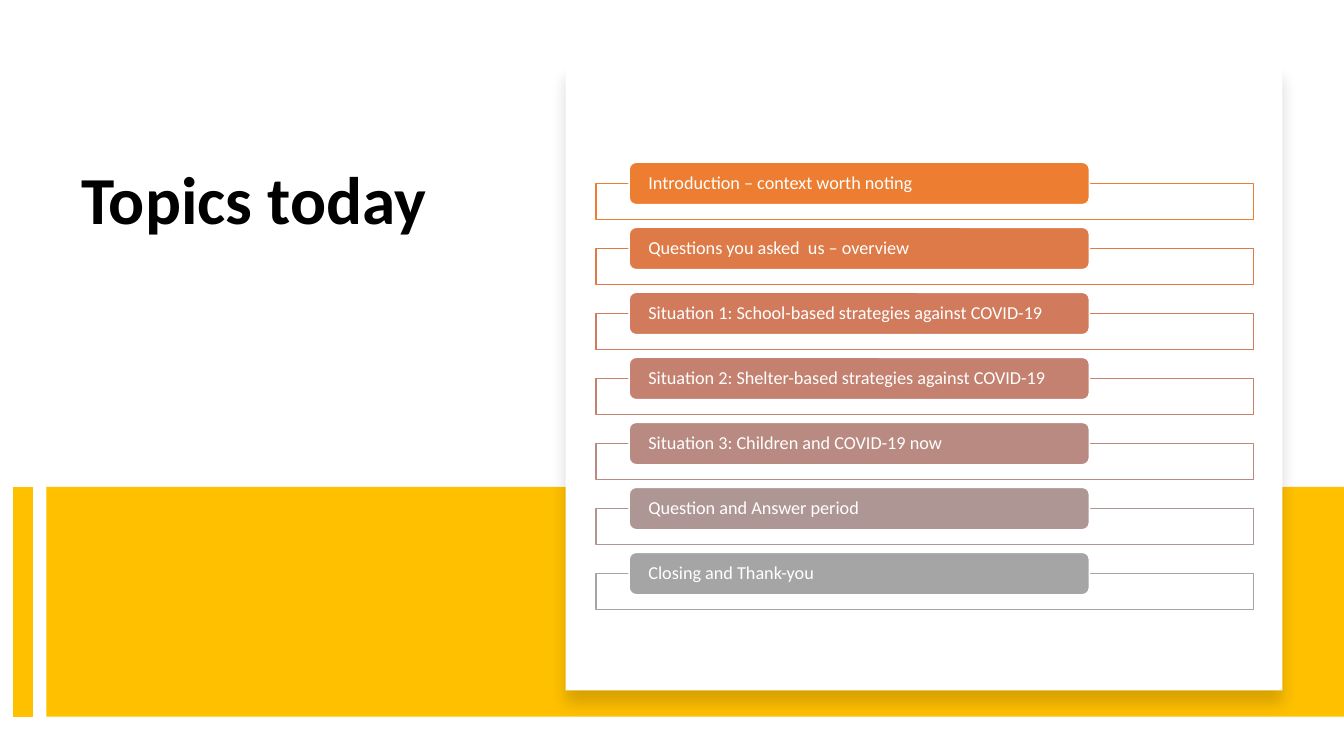
from pptx import Presentation
from pptx.dml.color import RGBColor
from pptx.enum.shapes import MSO_CONNECTOR as CONN, MSO_SHAPE as SHAPE
from pptx.enum.text import MSO_ANCHOR as ANCHOR, PP_ALIGN as ALIGN
from pptx.oxml import parse_xml
from pptx.oxml.ns import nsdecls, qn
from pptx.util import Inches, Pt

COLORS = {"white": "FFFFFF", "black": "000000", "gold": "FFC000"}
FONT = "Calibri"
TOPICS = [
    ("Introduction – context worth noting", "ED7D31"),
    ("Questions you asked  us – overview", "DE7A47"),
    ("Situation 1: School-based strategies against COVID-19", "D17B5C"),
    ("Situation 2: Shelter-based strategies against COVID-19", "C48170"),
    ("Situation 3: Children and COVID-19 now", "B98A82"),
    ("Question and Answer period", "AE9694"),
    ("Closing and Thank-you", "A5A5A5"),
]


def add_box(s, kind, x, y, w, h, fill, line=None):
    sp = s.shapes.add_shape(kind, Inches(x), Inches(y), Inches(w), Inches(h))
    sp.shadow.inherit = False
    sp.fill.solid()
    sp.fill.fore_color.rgb = RGBColor.from_string(fill)
    if line:
        sp.line.color.rgb = RGBColor.from_string(line)
        sp.line.width = Pt(1)
    else:
        sp.line.fill.background()
    return sp


def set_text(sp, text, size, color, bold=False):
    tf = sp.text_frame
    tf.word_wrap = True
    p = tf.paragraphs[0]
    p.text = text
    p.alignment = ALIGN.LEFT
    p.line_spacing = 0.9
    p.font.name = FONT
    p.font.size = Pt(size)
    p.font.bold = bold
    p.font.color.rgb = RGBColor.from_string(color)
    return tf


def add_title(s, x, y, w, h):
    tb = s.shapes.add_textbox(Inches(x), Inches(y), Inches(w), Inches(h))
    set_text(tb, "Topics today", 48, COLORS["black"], bold=True)


def add_band(s, x, y, w, h):
    # Thick bar at the left edge, then the wide band
    bar = s.shapes.add_connector(
        CONN.STRAIGHT, Inches(x), Inches(y), Inches(x), Inches(y + h))
    bar.line.color.rgb = RGBColor.from_string(COLORS["gold"])
    bar.line.width = Pt(14)
    bar._element.spPr.append(parse_xml(f"<a:effectLst {nsdecls('a')}/>"))
    add_box(s, SHAPE.RECTANGLE, x + 0.23, y, w - 0.23, h, COLORS["gold"])


def add_panel(s, x, y, w, h):
    panel = add_box(s, SHAPE.RECTANGLE, x, y, w, h, COLORS["white"])
    # Soft shadow falling straight down
    effects = panel._element.spPr.find(qn("a:effectLst"))
    effects.append(parse_xml(
        f'<a:outerShdw {nsdecls("a")} blurRad="{Pt(11)}" dist="{Pt(10)}" '
        f'dir="5400000" algn="t" rotWithShape="0">'
        f'<a:srgbClr val="{COLORS["black"]}"><a:alpha val="15000"/></a:srgbClr>'
        f'</a:outerShdw>'))


def add_topics(s, x, y, w, pitch):
    for i, (text, color) in enumerate(TOPICS):
        top = y + i * pitch
        # Outlined frame behind the label
        frame = add_box(s, SHAPE.RECTANGLE, x, top + 0.21, w, 0.36,
                        COLORS["white"], color)
        fill = frame._element.spPr.find(qn("a:solidFill"))
        fill[0].append(parse_xml(f'<a:alpha {nsdecls("a")} val="90000"/>'))
        # Rounded label
        label = add_box(s, SHAPE.ROUNDED_RECTANGLE, x + 0.33, top,
                        w * 0.7, 0.42, color, COLORS["white"])
        tf = set_text(label, text, 13, COLORS["white"])
        tf.vertical_anchor = ANCHOR.MIDDLE
        tf.margin_left = tf.margin_right = Inches(0.17)
        tf.margin_top = tf.margin_bottom = 0


def main():
    prs = Presentation()
    prs.slide_width, prs.slide_height = Inches(13.33), Inches(7.5)
    s = prs.slides.add_slide(prs.slide_layouts[6])
    add_title(s, 0.71, 1.6, 4.15, 2.94)
    add_band(s, 0.23, 4.83, 13.1, 2.28)
    add_panel(s, 5.61, 0.64, 7.11, 6.21)
    add_topics(s, 5.91, 1.61, 6.52, 0.645)
    prs.save("out.pptx")


if __name__ == "__main__":
    main()
